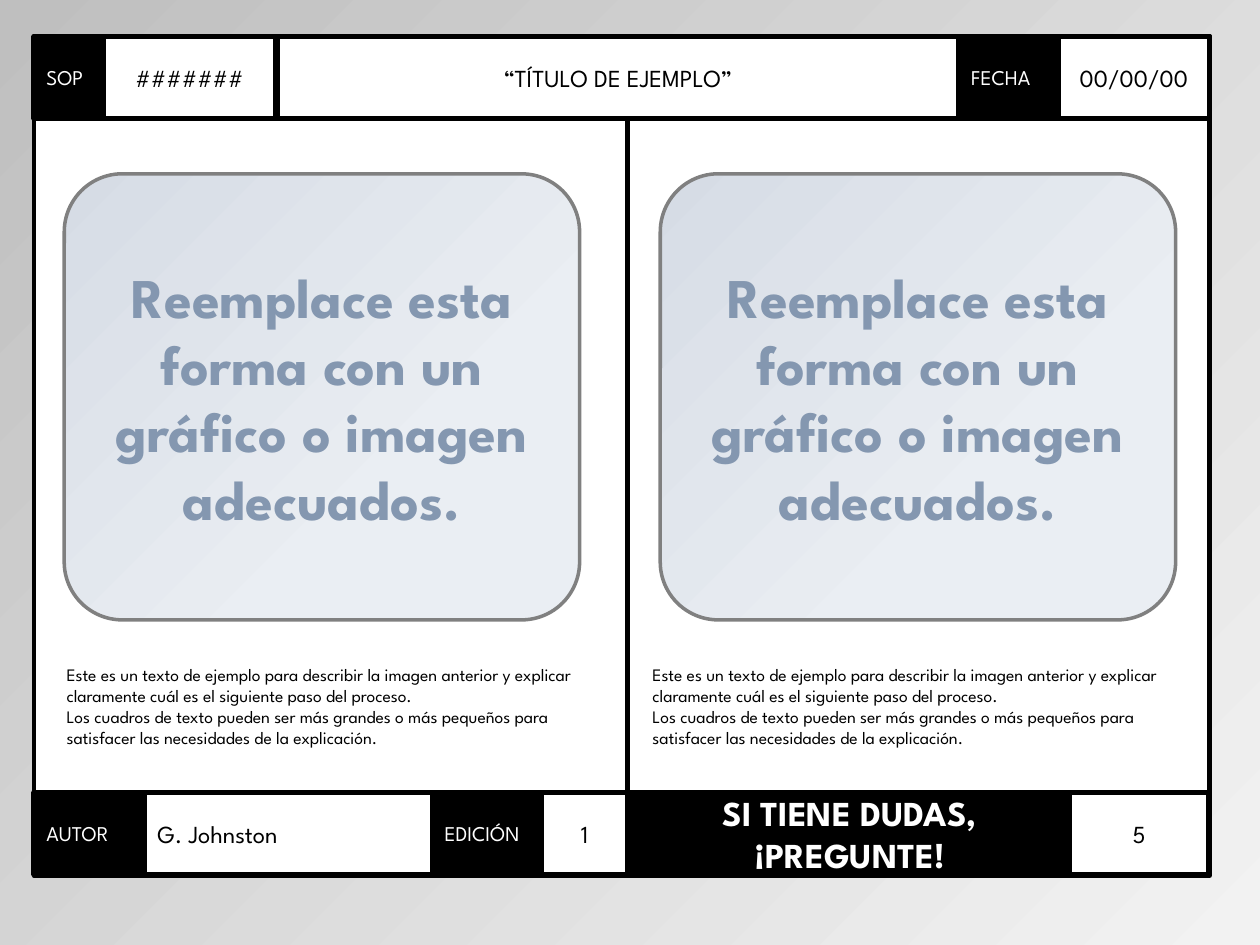
from lxml import etree
from pptx import Presentation
from pptx.dml.color import RGBColor
from pptx.enum.shapes import MSO_CONNECTOR, MSO_SHAPE
from pptx.enum.text import MSO_ANCHOR, MSO_AUTO_SIZE, PP_ALIGN
from pptx.oxml.ns import qn
from pptx.util import Inches, Pt

RECTANGLE = MSO_SHAPE.RECTANGLE
ROUNDED = MSO_SHAPE.ROUNDED_RECTANGLE
STRAIGHT = MSO_CONNECTOR.STRAIGHT
MIDDLE = MSO_ANCHOR.MIDDLE
LEFT, CENTER = PP_ALIGN.LEFT, PP_ALIGN.CENTER
FIXED_SIZE = MSO_AUTO_SIZE.NONE
GROW = MSO_AUTO_SIZE.SHAPE_TO_FIT_TEXT

FONT = "League Spartan"
COLORS = {
    "black": "000000",
    "white": "FFFFFF",
    "backdrop_light": "F2F2F2",
    "backdrop_dark": "BFBFBF",
    "panel_light": "EAEEF3",
    "panel_dark": "D6DCE5",
    "panel_border": "808080",
    "panel_text": "8497B0",
}

FRAME_LEFT, FRAME_TOP, FRAME_WIDTH, FRAME_HEIGHT = 0.27, 0.29, 9.33, 6.66
BAND_HEIGHT = 0.65
FOOTER_TOP = 6.29

PANEL_TEXT = "Reemplace esta forma con un gráfico o imagen adecuados."
DESCRIPTION = [
    "Este es un texto de ejemplo para describir la imagen anterior y explicar "
    "claramente cuál es el siguiente paso del proceso.",
    "Los cuadros de texto pueden ser más grandes o más pequeños para "
    "satisfacer las necesidades de la explicación.",
]


def color(name):
    return RGBColor.from_string(COLORS[name])


def set_gradient(fill, light, dark, start=0):
    fill.gradient()
    fill.gradient_angle = 135
    first, last = fill.gradient_stops
    first.color.rgb, first.position = color(light), start
    last.color.rgb, last.position = color(dark), 1


def set_outline(shape, name, width):
    shape.line.color.rgb = color(name)
    shape.line.width = Pt(width)


def write_text(frame, paragraphs, size, name, alignment=LEFT, bold=False):
    frame.word_wrap = True
    for index, text in enumerate(paragraphs):
        paragraph = frame.add_paragraph() if index else frame.paragraphs[0]
        paragraph.alignment = alignment
        run = paragraph.add_run()
        run.text = text
        run.font.name = FONT
        run.font.size = Pt(size)
        run.font.bold = bold
        run.font.color.rgb = color(name)


def add_box(slide, kind, left, top, width, height):
    shape = slide.shapes.add_shape(
        kind, Inches(left), Inches(top), Inches(width), Inches(height))
    shape.shadow.inherit = False
    shape.text_frame.vertical_anchor = MIDDLE
    return shape


def add_frame(slide, height, filled):
    shape = add_box(slide, RECTANGLE, FRAME_LEFT, FRAME_TOP, FRAME_WIDTH, height)
    if filled:
        shape.fill.solid()
        shape.fill.fore_color.rgb = color("white")
    else:
        shape.fill.background()
    set_outline(shape, "black", 2.75)


def add_label(slide, left, top, width, text, size=12, alignment=LEFT, bold=False):
    shape = add_box(slide, RECTANGLE, left, top, width, BAND_HEIGHT)
    shape.fill.solid()
    shape.fill.fore_color.rgb = color("black")
    set_outline(shape, "black", 3)
    write_text(shape.text_frame, [text], size, "white", alignment, bold)


def format_value(shape, text, alignment=CENTER):
    shape.fill.solid()
    shape.fill.fore_color.rgb = color("white")
    set_outline(shape, "black", 2.75)
    write_text(shape.text_frame, [text], 14, "black", alignment)


def add_value(slide, left, top, width, text, alignment=CENTER):
    shape = add_box(slide, RECTANGLE, left, top, width, BAND_HEIGHT)
    format_value(shape, text, alignment)


def place_title(slide, left, width, text):
    title = slide.shapes.title
    title.left, title.top = Inches(left), Inches(FRAME_TOP)
    title.width, title.height = Inches(width), Inches(BAND_HEIGHT)
    title.text_frame.auto_size = FIXED_SIZE
    title.text_frame.vertical_anchor = MIDDLE
    format_value(title, text)
    slide.shapes._spTree.append(title._element)


def add_panel(slide, left):
    shape = add_box(slide, ROUNDED, left, 1.38, 4.09, 3.54)
    shape.adjustments[0] = 0.13
    set_gradient(shape.fill, "panel_light", "panel_dark", 0.32)
    set_outline(shape, "panel_border", 2)
    write_text(shape.text_frame, [PANEL_TEXT], 32, "panel_text", CENTER, True)


def add_description(slide, left):
    box = slide.shapes.add_textbox(
        Inches(left), Inches(5.22), Inches(4.41), Inches(0.77))
    write_text(box.text_frame, DESCRIPTION, 10, "black")
    box.text_frame.auto_size = GROW


def add_divider(slide, x, top, bottom):
    line = slide.shapes.add_connector(
        STRAIGHT, Inches(x), Inches(top), Inches(x), Inches(bottom))
    set_outline(line, "black", 3)
    etree.SubElement(line._element.spPr, qn("a:effectLst"))


def main():
    presentation = Presentation()
    presentation.slide_width = Inches(10)
    presentation.slide_height = Inches(7.5)
    slide = presentation.slides.add_slide(presentation.slide_layouts[5])
    set_gradient(slide.background.fill, "backdrop_light", "backdrop_dark")

    add_frame(slide, FRAME_HEIGHT, True)
    add_label(slide, FRAME_LEFT, FRAME_TOP, 0.55, "SOP")
    add_frame(slide, BAND_HEIGHT, False)
    add_value(slide, 0.82, FRAME_TOP, 1.37, "#######")
    add_label(slide, 7.61, FRAME_TOP, 0.8, "FECHA")
    add_value(slide, 8.4, FRAME_TOP, 1.2, "00/00/00")
    place_title(slide, 2.2, 5.41, "“TÍTULO DE EJEMPLO”")

    for panel_left, description_left in ((0.51, 0.43), (5.24, 5.08)):
        add_panel(slide, panel_left)
        add_description(slide, description_left)
    add_divider(slide, 4.98, 0.95, FOOTER_TOP)

    add_label(slide, FRAME_LEFT, FOOTER_TOP, 0.88, "AUTOR")
    add_value(slide, 1.15, FOOTER_TOP, 2.28, "G. Johnston", LEFT)
    add_label(slide, 5, FOOTER_TOP, 3.49, "SI TIENE DUDAS, ¡PREGUNTE!", 20, CENTER, True)
    add_value(slide, 8.49, FOOTER_TOP, 1.1, "5")
    add_label(slide, 3.43, FOOTER_TOP, 0.91, "EDICIÓN")
    add_value(slide, 4.3, FOOTER_TOP, 0.68, "1")

    presentation.save("out.pptx")


if __name__ == "__main__":
    main()
